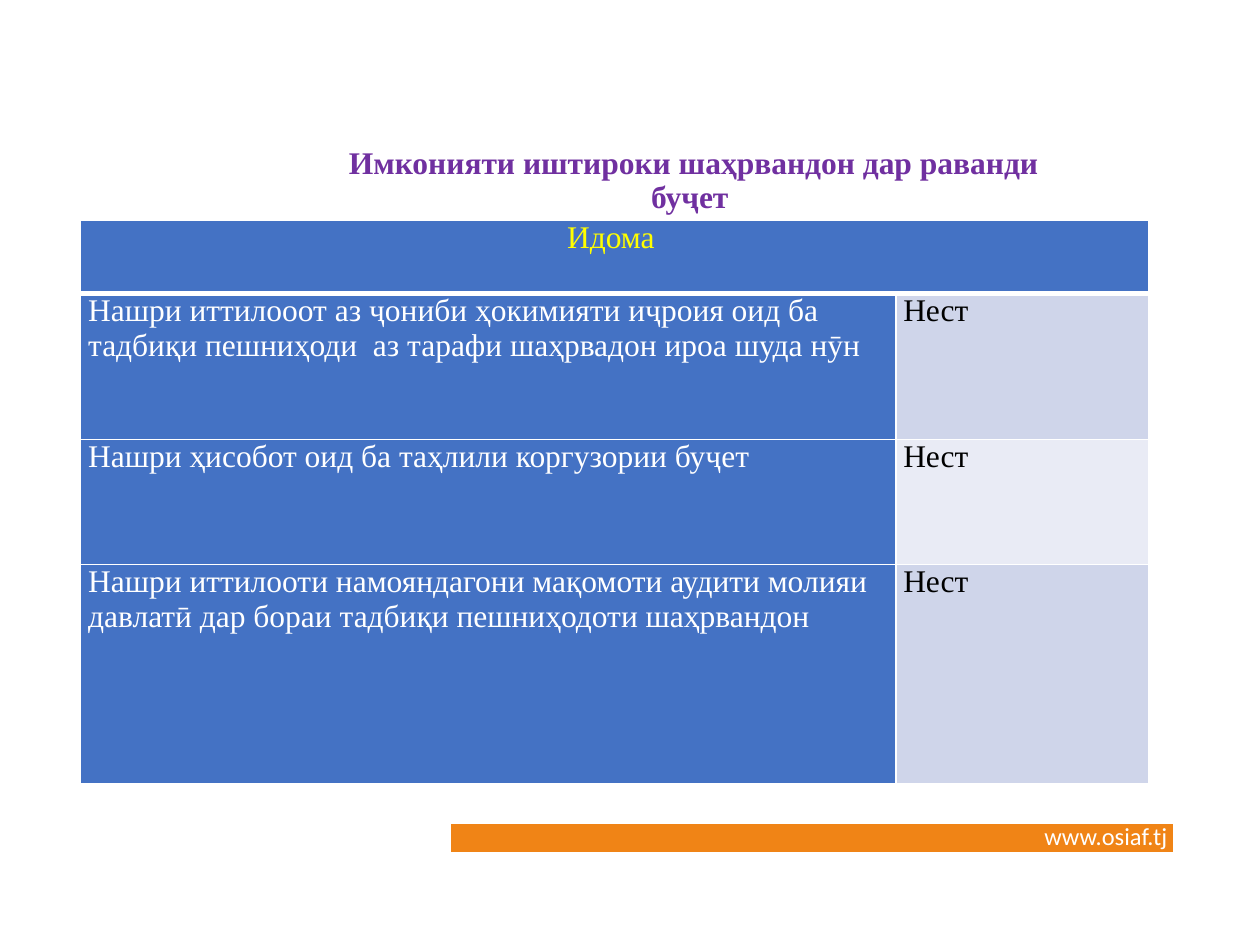
from lxml import etree
from pptx import Presentation
from pptx.dml.color import RGBColor
from pptx.enum import shapes, text
from pptx.oxml.ns import qn
from pptx.util import Pt


def tint(code):
    return RGBColor.from_string(code)


def write(frame, words, color, align=text.PP_ALIGN.LEFT, **extra):
    para = frame.paragraphs[0]
    para.text = words
    para.alignment = align
    look = dict(name="Times New Roman", size=Pt(18), bold=False) | extra
    for key, val in look.items():
        setattr(para.runs[0].font, key, val)
    para.runs[0].font.color.rgb = tint(color)
    return para


deck = Presentation()
deck.slide_width, deck.slide_height = Pt(720), Pt(540)
slide = deck.slides.add_slide(deck.slide_layouts[5])
items = slide.shapes

bar = items.add_connector(shapes.MSO_CONNECTOR.STRAIGHT, Pt(257.8), Pt(478.8), Pt(670.3), Pt(478.8))
bar.line.width = Pt(16)
bar.line.color.rgb = tint("F08416")
etree.SubElement(bar._element.spPr, qn("a:effectLst"))

site = items.add_textbox(Pt(589.7), Pt(465.8), Pt(114.5), Pt(24.5))
site.text_frame.word_wrap = True
write(site.text_frame, "www.osiaf.tj", "FFFFFF", name="Calibri", size=Pt(14))

rows = [
    ("Идома ", ""),
    ("Нашри иттилооот аз ҷониби ҳокимияти иҷроия оид ба тадбиқи пешниҳоди  аз тарафи шаҳрвадон ироа шуда нӯн", "Нест"),
    ("Нашри ҳисобот оид ба таҳлили коргузории буҷет", "Нест"),
    ("Нашри иттилооти намояндагони мақомоти аудити молияи давлатӣ дар бораи тадбиқи пешниҳодоти шаҳрвандон", "Нест"),
]
tall = [41.8, 83.5, 71.3, 125.3]
wide = [465.8, 144.7]
grid = items.add_table(4, 2, Pt(46.1), Pt(126), Pt(sum(wide)), Pt(sum(tall))).table
grid.first_row = grid.horz_banding = False
for col, size in zip(grid.columns, wide):
    col.width = Pt(size)
for row, size in zip(grid.rows, tall):
    row.height = Pt(size)
grid.cell(0, 0).merge(grid.cell(0, 1))

inset = dict(margin_left=Pt(4.3), margin_right=Pt(4.3), margin_top=0, margin_bottom=0)
for r, row in enumerate(rows):
    for c, words in enumerate(row):
        cell = grid.cell(r, c)
        for key, val in inset.items():
            setattr(cell, key, val)
        props = cell._tc.get_or_add_tcPr()
        for side in "LRTB":
            thick = 3 if (r, side) in [(0, "B"), (1, "T")] else 1
            edge = etree.SubElement(props, qn("a:ln" + side), w=str(Pt(thick)))
            paint = etree.SubElement(edge, qn("a:solidFill"))
            etree.SubElement(paint, qn("a:srgbClr"), val="FFFFFF")
        band = "CFD5EA" if r % 2 else "E9EBF5"
        cell.fill.solid()
        cell.fill.fore_color.rgb = tint(band if r and c else "4472C4")
        if not words:
            continue
        if r == 0:
            write(cell.text_frame, words, "FFFF00", text.PP_ALIGN.CENTER)
        else:
            write(cell.text_frame, words, "000000" if c else "FFFFFF")

title = items.title
spot = dict(left=Pt(175), top=Pt(69.8), width=Pt(442.8), height=Pt(67.7))
for key, val in spot.items():
    setattr(title, key, val)
frame = title.text_frame
frame.auto_size = text.MSO_AUTO_SIZE.NONE
frame.vertical_anchor = text.MSO_ANCHOR.MIDDLE
head = write(frame, "Имконияти иштироки шаҳрвандон дар раванди буҷет ", "7030A0", text.PP_ALIGN.CENTER, bold=True)
head.line_spacing = 0.9

deck.save("out.pptx")
